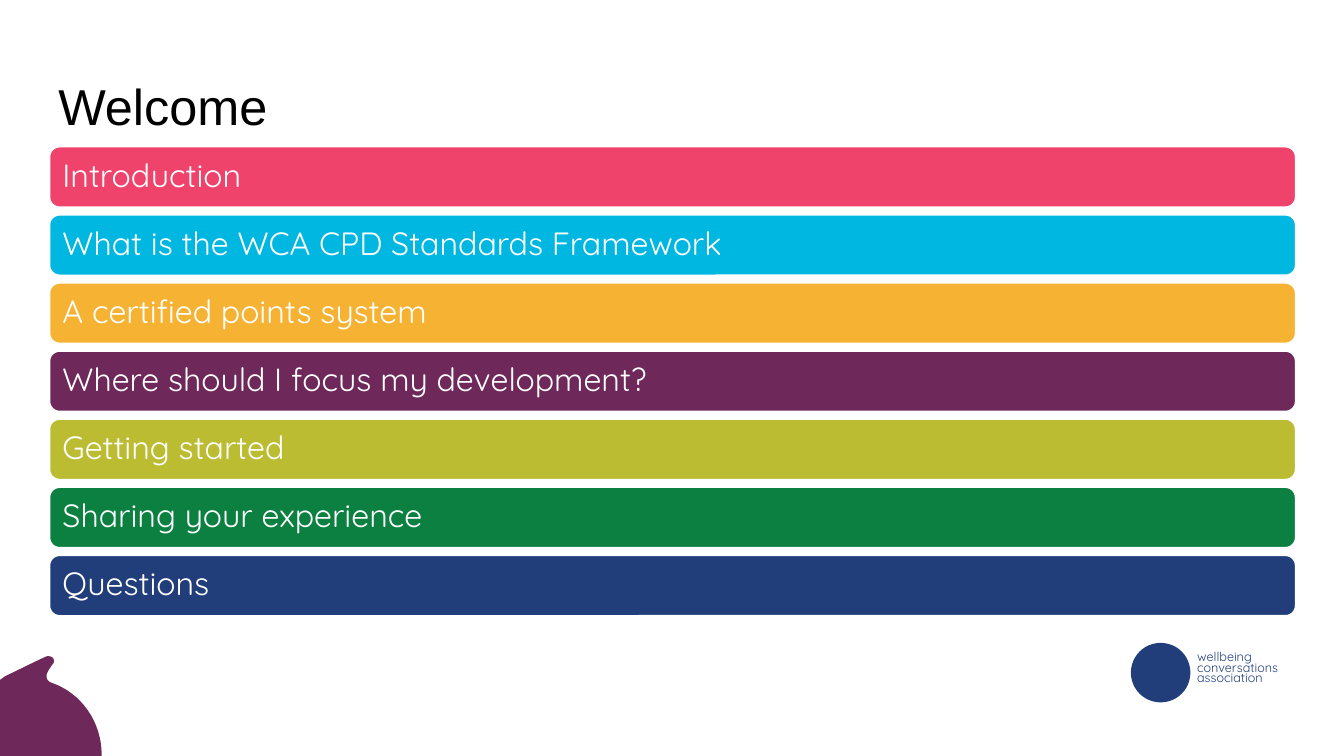
import pptx
import pptx.util
import pptx.dml.color
import pptx.enum.shapes
import pptx.enum.text

Cm, Pt = pptx.util.Cm, pptx.util.Pt
Kind = pptx.enum.shapes.MSO_SHAPE
Anchor = pptx.enum.text.MSO_ANCHOR
Align = pptx.enum.text.PP_ALIGN

# Content
TITLE = "Welcome"
TOPICS = [
    ("Introduction", "pink"),
    ("What is the WCA CPD Standards Framework", "cyan"),
    ("A certified points system", "amber"),
    ("Where should I focus my development?", "plum"),
    ("Getting started", "lime"),
    ("Sharing your experience", "green"),
    ("Questions", "navy"),
]
GROUP = ["wellbeing", "conversations", "association"]
COLORS = {
    "pink": "EF436B", "cyan": "00B7E2", "amber": "F6B233", "plum": "6E295A",
    "lime": "BCBC33", "green": "0B8040", "navy": "213E7A",
    "white": "FFFFFF", "black": "000000",
}

# Corner leaf in cm: one point is a straight line, three are a curve
START = (1.22, 16.59)
LEAF = [
    [(1.3, 16.59), (1.32, 16.64), (1.3, 16.69)],
    [(1.24, 16.76), (1.19, 16.84), (1.14, 16.94)],
    [(1.09, 17.07), (1.14, 17.2), (1.27, 17.25)],
    [(2.01, 17.5), (2.51, 18.21), (2.51, 19.02)],
    [(2.51, 19.05)], [(0, 19.05)], [(0, 17.2)], [(0.15, 17.09)],
    [(0.51, 16.92), (0.86, 16.74), (1.19, 16.59)],
]
STEPS = 16

# Layout in cm
LEFT, TOP, WIDE, HIGH, PITCH = 1.25, 3.7, 31.4, 1.52, 1.716


def tint(name):
    return pptx.dml.color.RGBColor.from_string(COLORS[name])


def write(shape, lines, size, color, font="Quicksand", space=0.9,
          anchor=Anchor.MIDDLE, inset=0.25):
    frame = shape.text_frame
    frame.word_wrap = True
    frame.auto_size = pptx.enum.text.MSO_AUTO_SIZE.NONE
    frame.vertical_anchor = anchor
    frame.margin_left = frame.margin_right = Cm(inset)
    frame.margin_top = frame.margin_bottom = Cm(0.13)
    for i, line in enumerate(lines):
        para = frame.add_paragraph() if i else frame.paragraphs[0]
        para.alignment = Align.LEFT
        para.line_spacing = space
        run = para.add_run()
        run.text = line
        run.font.size = Pt(size)
        run.font.name = font
        run.font.color.rgb = tint(color)


def paint(shape, color, edge=None, width=1):
    shape.shadow.inherit = False
    shape.fill.solid()
    shape.fill.fore_color.rgb = tint(color)
    if edge:
        shape.line.color.rgb = tint(edge)
        shape.line.width = Pt(width)
    else:
        shape.line.fill.background()


def curve(p, a, b, c, t):
    u = 1 - t
    return tuple(u**3 * p[k] + 3 * u * u * t * a[k] + 3 * u * t * t * b[k]
                 + t**3 * c[k] for k in (0, 1))


def trace(start, parts):
    dots = [start]
    for part in parts:
        last = dots[-1]
        if len(part) == 1:
            dots += part
        else:
            dots += [curve(last, *part, n / STEPS) for n in range(1, STEPS + 1)]
    return [(Cm(x), Cm(y)) for x, y in dots]


def main():
    deck = pptx.Presentation()
    deck.slide_width, deck.slide_height = Cm(33.87), Cm(19.05)
    slide = deck.slides.add_slide(deck.slide_layouts[5])
    shapes = slide.shapes

    # Plain mark and group name
    mark = shapes.add_shape(Kind.OVAL, Cm(28.5), Cm(16.2), Cm(1.5), Cm(1.5))
    paint(mark, "navy")
    name = shapes.add_textbox(Cm(29.92), Cm(16.33), Cm(3), Cm(1.07))
    write(name, GROUP, 9, "navy", space=0.7, anchor=Anchor.TOP)

    # Corner leaf
    dots = trace(START, LEAF)
    pen = shapes.build_freeform(*dots[0])
    pen.add_line_segments(dots[1:], close=True)
    paint(pen.convert_to_shape(), "plum", edge="plum", width=3)

    # Title
    title = shapes.title
    title.left, title.top = Cm(1.22), Cm(1.83)
    title.width, title.height = Cm(31.45), Cm(1.75)
    write(title, [TITLE], 36, "black", font="Arial", anchor=Anchor.BOTTOM)

    # Topic bars
    for i, (topic, color) in enumerate(TOPICS):
        bar = shapes.add_shape(Kind.ROUNDED_RECTANGLE, Cm(LEFT),
                               Cm(TOP + i * PITCH), Cm(WIDE), Cm(HIGH))
        paint(bar, color, edge="white")
        write(bar, [topic], 23, "white")

    deck.save("out.pptx")


if __name__ == "__main__":
    main()
